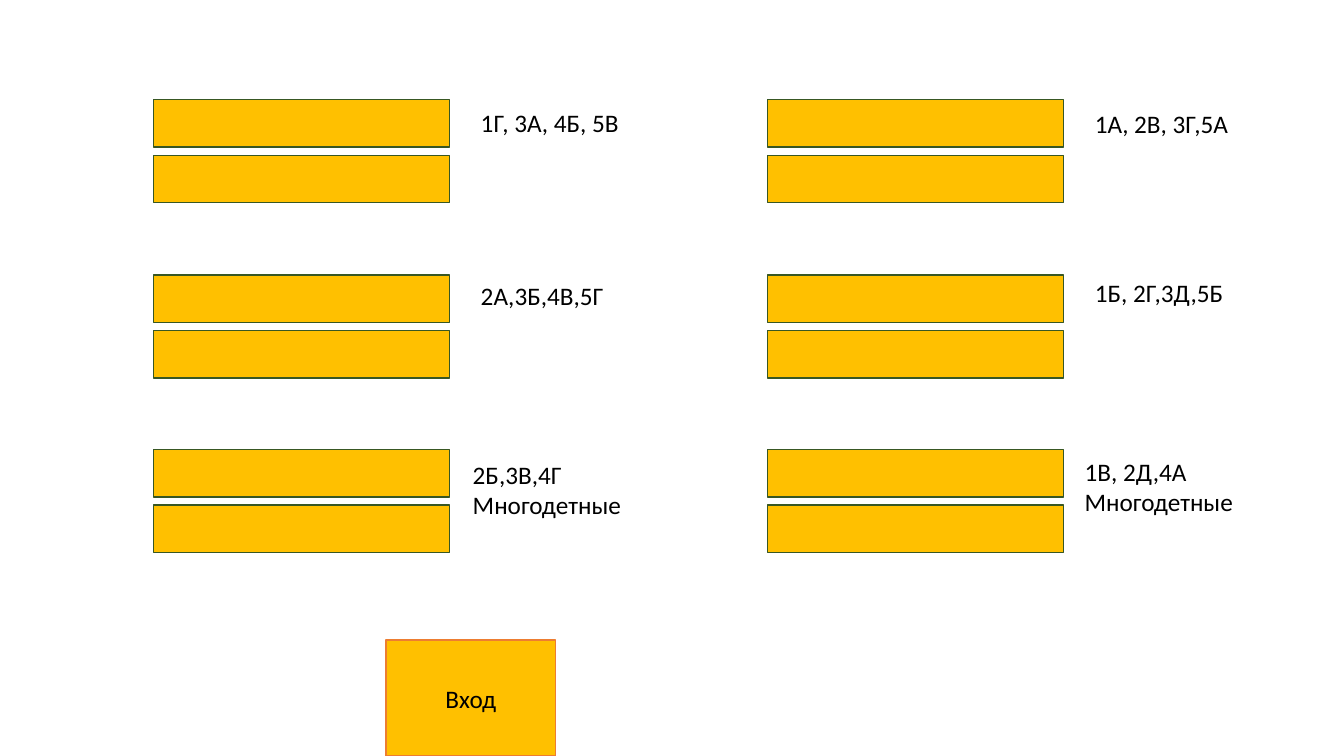
"""Build a seating plan slide with paired benches, class labels and an entrance."""
from pptx import Presentation
from pptx.dml.color import RGBColor
from pptx.enum.shapes import MSO_SHAPE as Shape
from pptx.enum.text import MSO_ANCHOR as Anchor, MSO_AUTO_SIZE as AutoSize, PP_ALIGN as Align
from pptx.util import Inches, Pt

COLORS = {"bench": "FFC000", "bench_line": "385723", "entrance_line": "ED7D31", "text": "000000"}
FONT = {"name": "Calibri", "size": Pt(18)}

COLUMN_LEFTS = (1.52, 7.61)
ROW_TOPS = (0.99, 2.73, 4.46)
BENCH_SIZE = (2.94, 0.47)
BENCH_STEP = 0.55
ENTRANCE = ("Вход", (3.83, 6.35, 1.68, 1.15))

LABELS = [
    [
        (["1Г, 3А, 4Б, 5В"], (4.67, 1.02, 2.1, 0.4)),
        (["2А,3Б,4В,5Г"], (4.67, 2.73, 2.1, 0.4)),
        (["2Б,3В,4Г", "Многодетные"], (4.59, 4.51, 2.41, 0.71)),
    ],
    [
        (["1А, 2В, 3Г,5А"], (10.76, 1.03, 2.1, 0.4)),
        (["1Б, 2Г,3Д,5Б"], (10.76, 2.7, 2.1, 0.4)),
        (["1В, 2Д,4А", "Многодетные"], (10.66, 4.48, 2.31, 1.01)),
    ],
]


def color(name):
    """Return the named colour."""
    return RGBColor.from_string(COLORS[name])


def add_box(shapes, bounds, line):
    """Add a filled rectangle with a thin outline."""
    shape = shapes.add_shape(Shape.RECTANGLE, *map(Inches, bounds))
    shape.shadow.inherit = False
    shape.fill.solid()
    shape.fill.fore_color.rgb = color("bench")
    shape.line.color.rgb = color(line)
    shape.line.width = Pt(1)
    return shape


def write_lines(frame, lines, align):
    """Write one paragraph for each line."""
    frame.word_wrap = True
    frame.text = "\n".join(lines)
    for paragraph in frame.paragraphs:
        paragraph.alignment = align
        for run in paragraph.runs:
            for attribute, value in FONT.items():
                setattr(run.font, attribute, value)
            run.font.color.rgb = color("text")


def add_bench_pair(slide, left, top):
    """Add two grouped benches, one below the other."""
    group = slide.shapes.add_group_shape()
    for index in range(2):
        add_box(group.shapes, (left, top + index * BENCH_STEP, *BENCH_SIZE), "bench_line")


def add_label(slide, lines, bounds):
    """Add the classes seated beside a pair of benches."""
    frame = slide.shapes.add_textbox(*map(Inches, bounds)).text_frame
    write_lines(frame, lines, Align.LEFT)
    frame.auto_size = AutoSize.SHAPE_TO_FIT_TEXT


def main():
    """Create and save the presentation."""
    presentation = Presentation()
    presentation.slide_width = Inches(13.33)
    presentation.slide_height = Inches(7.5)
    slide = presentation.slides.add_slide(presentation.slide_layouts[6])

    for left, labels in zip(COLUMN_LEFTS, LABELS):
        for top, (lines, bounds) in zip(ROW_TOPS, labels):
            add_bench_pair(slide, left, top)
            add_label(slide, lines, bounds)

    text, bounds = ENTRANCE
    entrance = add_box(slide.shapes, bounds, "entrance_line")
    entrance.text_frame.vertical_anchor = Anchor.MIDDLE
    write_lines(entrance.text_frame, [text], Align.CENTER)
    presentation.save("out.pptx")


if __name__ == "__main__":
    main()
